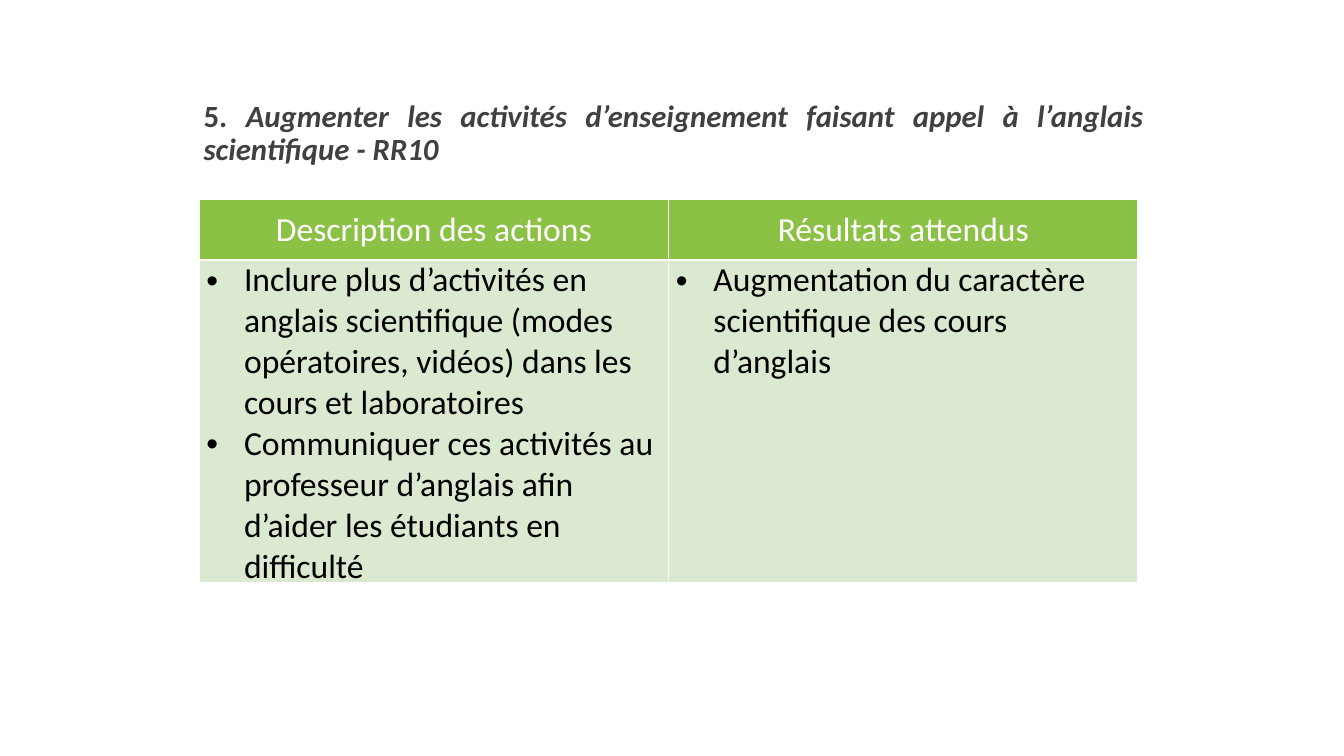
from lxml.etree import SubElement
from pptx import Presentation
from pptx.dml.color import RGBColor
from pptx.enum.text import MSO_ANCHOR, PP_ALIGN
from pptx.oxml.ns import qn
from pptx.util import Cm, Pt

FONT = "Calibri"
COLORS = {"title": "404040", "head": "8BC145", "body": "DAE9CF",
          "light": "FFFFFF", "dark": "000000"}
TITLE = [
    ("5. ", False),
    ("Augmenter les activités d’enseignement faisant appel à l’anglais scientifique - RR10", True),
]
TABLE = [
    ("Description des actions", [
        "Inclure plus d’activités en anglais scientifique (modes opératoires, vidéos) dans les cours et laboratoires",
        "Communiquer ces activités au professeur d’anglais afin d’aider les étudiants en difficulté",
    ]),
    ("Résultats attendus", [
        "Augmentation du caractère scientifique des cours d’anglais",
    ]),
]
WIDTH = Cm(23.66)
ROWS = [Cm(1.52), Cm(8.13)]


def add_run(par, text, size, color, bold=False, italic=False):
    run = par.add_run()
    run.text = text
    font = run.font
    font.name, font.size = FONT, Pt(size)
    font.bold, font.italic = bold, italic
    font.color.rgb = RGBColor.from_string(COLORS[color])


def add_bullet(par):
    props = par._p.get_or_add_pPr()
    props.set("marL", str(Cm(0.95)))
    props.set("indent", str(-Cm(0.95)))
    SubElement(props, qn("a:buFont"), typeface="Arial")
    SubElement(props, qn("a:buChar"), char="•")


def add_edges(cell):
    props = cell._tc.get_or_add_tcPr()
    for spot, side in enumerate("LRTB"):
        line = SubElement(props, qn("a:ln" + side), w=str(Pt(1)))
        fill = SubElement(line, qn("a:solidFill"))
        SubElement(fill, qn("a:srgbClr"), val=COLORS["light"])
        props.insert(spot, line)


def fill_cell(cell, texts, head):
    cell.fill.solid()
    cell.fill.fore_color.rgb = RGBColor.from_string(COLORS["head" if head else "body"])
    cell.margin_left = cell.margin_right = Cm(0.25 if head else 0.18)
    cell.margin_top = cell.margin_bottom = Cm(0.25 if head else 0)
    add_edges(cell)
    frame = cell.text_frame
    for spot, text in enumerate(texts):
        par = frame.add_paragraph() if spot else frame.paragraphs[0]
        if head:
            par.alignment = PP_ALIGN.CENTER
        else:
            add_bullet(par)
        add_run(par, text, 24, "light" if head else "dark")


def add_title(slide):
    box = slide.shapes.add_textbox(Cm(4.88), Cm(1.9), Cm(24.18), Cm(2.97))
    frame = box.text_frame
    frame.word_wrap = True
    frame.vertical_anchor = MSO_ANCHOR.MIDDLE
    par = frame.paragraphs[0]
    par.alignment = PP_ALIGN.JUSTIFY
    par.line_spacing = 0.9
    for text, italic in TITLE:
        add_run(par, text, 22, "title", True, italic)


def add_grid(slide):
    grid = slide.shapes.add_table(
        len(ROWS), len(TABLE), Cm(5.02), Cm(5.03), WIDTH, sum(ROWS)).table
    for row, height in zip(grid.rows, ROWS):
        row.height = height
    for col, (head, items) in enumerate(TABLE):
        grid.columns[col].width = WIDTH // len(TABLE)
        fill_cell(grid.cell(0, col), [head], True)
        fill_cell(grid.cell(1, col), items, False)


def main():
    deck = Presentation()
    deck.slide_width, deck.slide_height = Cm(33.87), Cm(19.05)
    slide = deck.slides.add_slide(deck.slide_layouts[6])
    add_title(slide)
    add_grid(slide)
    deck.save("out.pptx")


if __name__ == "__main__":
    main()
